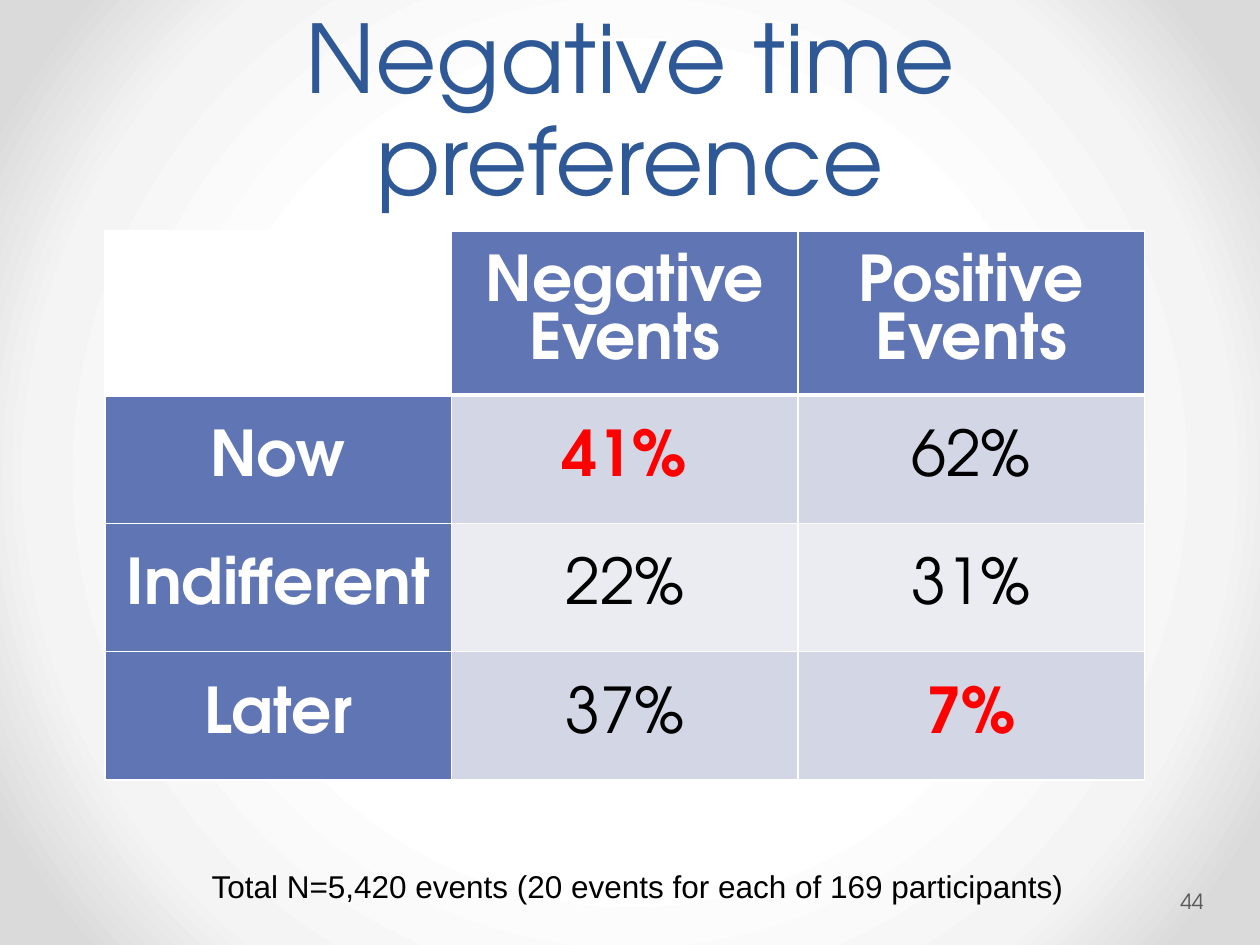
"""Build the slide on negative time preference with its table of shares."""
from pptx import Presentation
from pptx.dml.color import RGBColor
from pptx.enum.text import MSO_ANCHOR, MSO_AUTO_SIZE, PP_ALIGN
from pptx.oxml import parse_xml
from pptx.util import Pt

NS = 'xmlns:a="http://schemas.openxmlformats.org/drawingml/2006/main"'
PNS = 'xmlns:p="http://schemas.openxmlformats.org/presentationml/2006/main"'
FACE = "TeX Gyre Adventor"
INK = {"title": "2F5897", "head": "6076B4", "dark": "D2D6E5", "light": "EAECF2",
       "white": "FFFFFF", "black": "000000", "red": "FF0000", "grey": "595959"}


def style(para, size, color, face=FACE, bold=False):
    font = para.font
    font.name, font.size, font.bold = face, Pt(size), bold
    font.color.rgb = RGBColor.from_string(INK[color])


def border(cell, base):
    props = cell._tc.get_or_add_tcPr()
    for spot, (side, width) in enumerate([("L", 1), ("R", 1), ("T", 1), ("B", base)]):
        props.insert(spot, parse_xml(
            f'<a:ln{side} {NS} w="{Pt(width)}"><a:solidFill>'
            f'<a:srgbClr val="{INK["white"]}"/></a:solidFill></a:ln{side}>'))


deck = Presentation()
deck.slide_width, deck.slide_height = Pt(720), Pt(540)
slide = deck.slides.add_slide(deck.slide_layouts[5])

stops = "".join(f'<a:gs pos="{pos}000"><a:srgbClr val="{tone}"/></a:gs>'
                for pos, tone in [(50, "FFFFFF"), (76, "F4F4F4"), (92, "DADADA")])
slide.element.cSld.insert(0, parse_xml(
    f'<p:bg {PNS} {NS}><p:bgPr><a:gradFill rotWithShape="1"><a:gsLst>{stops}</a:gsLst>'
    '<a:path path="circle"><a:fillToRect l="50000" t="50000" r="50000" b="50000"/></a:path>'
    '</a:gradFill><a:effectLst/></p:bgPr></p:bg>'))

title = slide.shapes.title
title.left, title.top, title.width, title.height = Pt(36), Pt(0), Pt(648), Pt(126)
frame = title.text_frame
frame.text = "Negative time preference"
frame.word_wrap, frame.auto_size = True, MSO_AUTO_SIZE.NONE
frame.vertical_anchor = MSO_ANCHOR.BOTTOM
para = frame.paragraphs[0]
para.alignment, para.line_spacing = PP_ALIGN.CENTER, Pt(58)
style(para, 54, "title")

box = slide.shapes.add_textbox(Pt(672.5), Pt(500.4), Pt(44), Pt(28.8))
frame = box.text_frame
frame.text = "44"
frame.word_wrap, frame.margin_left, frame.margin_right = True, Pt(2), Pt(3.6)
frame.vertical_anchor = MSO_ANCHOR.MIDDLE
style(frame.paragraphs[0], 12, "grey")

rows = [["", "Negative Events", "Positive Events"],
        ["Now", "41%", "62%"],
        ["Indifferent", "22%", "31%"],
        ["Later", "37%", "7%"]]
marked = {"41%", "7%"}
table = slide.shapes.add_table(4, 3, Pt(60), Pt(132), Pt(594), Pt(293.6)).table
for r, row in enumerate(rows):
    for c, text in enumerate(row):
        cell = table.cell(r, c)
        head = r == 0 or c == 0
        fill = "head" if head else "dark" if r % 2 else "light"
        cell.fill.solid()
        cell.fill.fore_color.rgb = RGBColor.from_string(INK[fill if text else "white"])
        cell.vertical_anchor = MSO_ANCHOR.MIDDLE
        cell.text = text
        para = cell.text_frame.paragraphs[0]
        para.alignment = PP_ALIGN.CENTER
        color = "white" if head else "red" if text in marked else "black"
        style(para, 36, color, bold=head or text in marked)
        border(cell, 1 if r else 3)

box = slide.shapes.add_textbox(Pt(113.8), Pt(491.8), Pt(503.3), Pt(28.8))
frame = box.text_frame
frame.text = "Total N=5,420 events (20 events for each of 169 participants)"
frame.word_wrap, frame.auto_size = False, MSO_AUTO_SIZE.SHAPE_TO_FIT_TEXT
style(frame.paragraphs[0], 18, "black", "Arial")

deck.save("out.pptx")
